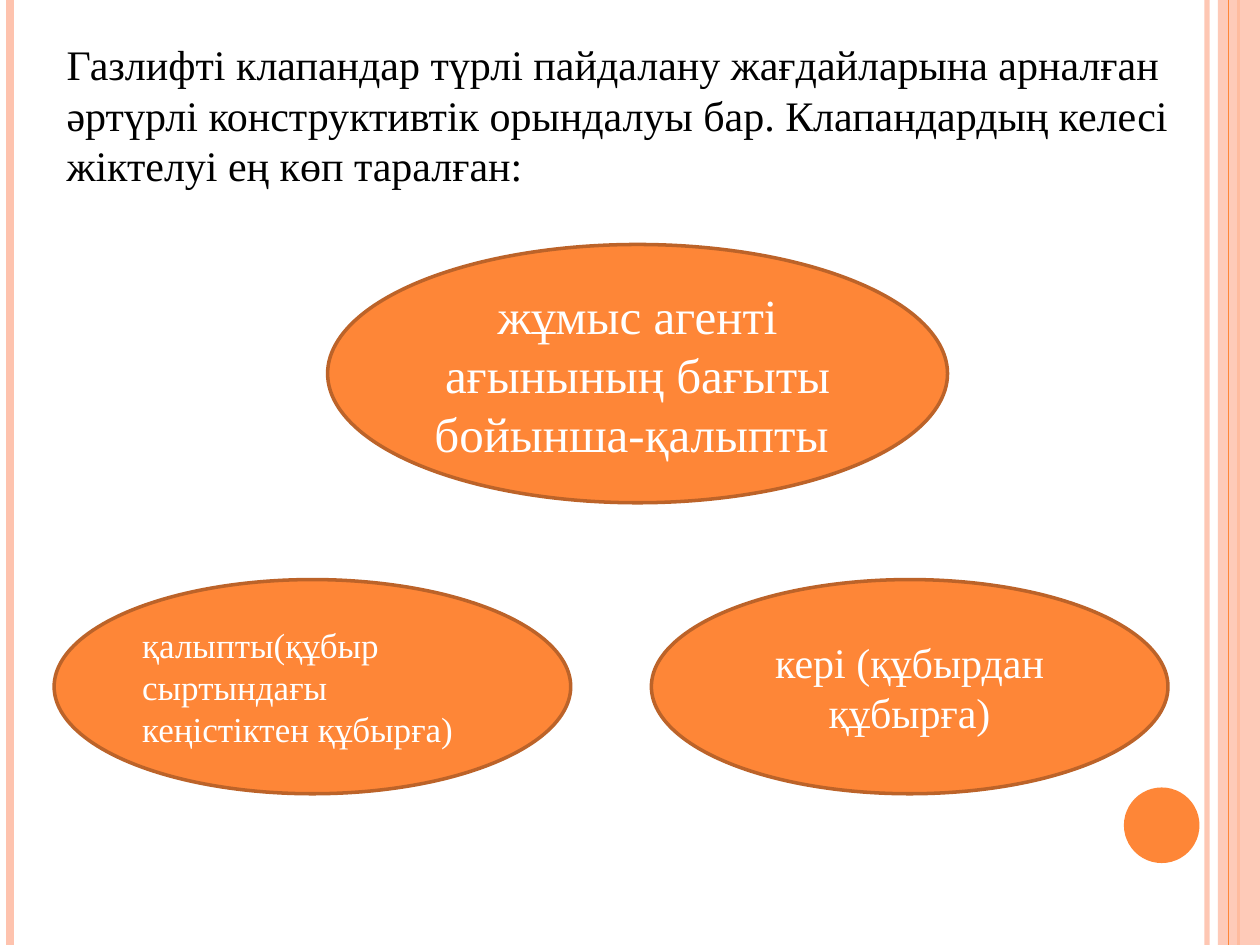
from dataclasses import dataclass

from lxml.etree import SubElement
from pptx import Presentation
from pptx.dml.color import RGBColor
from pptx.enum.shapes import MSO_CONNECTOR as Link, MSO_SHAPE as Kind
from pptx.enum.text import MSO_ANCHOR as Anchor, PP_ALIGN as Align
from pptx.oxml.ns import qn
from pptx.util import Inches, Pt

WIDE, HIGH = 10, 7.5
FONT = "Times New Roman"
ORANGE = RGBColor(0xFE, 0x86, 0x37)
BROWN = RGBColor(0xBC, 0x63, 0x29)
PEACH = RGBColor(0xFE, 0xC3, 0xAE)
WHITE = RGBColor(0xFF, 0xFF, 0xFF)
BLACK = RGBColor(0, 0, 0)


@dataclass
class Box:
    left: float
    top: float
    width: float
    height: float

    def emu(self) -> list:
        return [Inches(n) for n in (self.left, self.top, self.width, self.height)]


@dataclass
class Rule:
    x: float
    color: RGBColor
    weight: float
    alpha: int = 100


@dataclass
class Oval:
    box: Box
    text: str
    size: int
    align: Align = Align.CENTER


def fade(props, alpha: int) -> None:
    """Set the opacity, in percent, of the first solid colour in props."""
    color = next(props.iter(qn("a:srgbClr")))
    SubElement(color, qn("a:alpha")).set("val", str(alpha * 1000))


def add_rule(slide, rule: Rule) -> None:
    x = Inches(rule.x)
    line = slide.shapes.add_connector(Link.STRAIGHT, x, 0, x, Inches(HIGH))
    line.line.color.rgb = rule.color
    line.line.width = Pt(rule.weight)
    props = line._element.spPr
    if rule.alpha < 100:
        fade(props, rule.alpha)
    SubElement(props, qn("a:effectLst"))


def add_form(slide, kind: Kind, box: Box, color: RGBColor):
    form = slide.shapes.add_shape(kind, *box.emu())
    form.shadow.inherit = False
    form.fill.solid()
    form.fill.fore_color.rgb = color
    form.line.fill.background()
    return form


def write(frame, text: str, size: int, color: RGBColor, align: Align) -> None:
    frame.word_wrap = True
    par = frame.paragraphs[0]
    par.text = text
    par.alignment = align
    par.font.name = FONT
    par.font.size = Pt(size)
    par.font.color.rgb = color


def add_oval(slide, oval: Oval) -> None:
    form = add_form(slide, Kind.OVAL, oval.box, ORANGE)
    form.line.color.rgb = BROWN
    form.line.width = Pt(2)
    form.text_frame.vertical_anchor = Anchor.MIDDLE
    write(form.text_frame, oval.text, oval.size, WHITE, oval.align)


BACK = [Rule(9.58, PEACH, 3, 93), Rule(0.08, PEACH, 4.5), Rule(9.83, ORANGE, 1.5)]
FRONT = Rule(9.75, ORANGE, 0.75)
BAND = Box(WIDE * 29 / 30, 0, WIDE / 30, HIGH)
DOT = Box(8.92, 6.25, 0.6, 0.6)
INTRO = ("Газлифті клапандар түрлі пайдалану жағдайларына арналған әртүрлі "
         "конструктивтік орындалуы бар. Клапандардың келесі жіктелуі ең көп "
         "таралған:")
ROW, LOW = 4.6, 1.7
OVALS = [
    Oval(Box(2.6, 1.94, 4.92, 2.05),
         "жұмыс агенті ағынының бағыты бойынша-қалыпты ", 28),
    Oval(Box(0.43, ROW, 4.1, LOW),
         "қалыпты(құбыр сыртындағы кеңістіктен құбырға) ", 20, Align.JUSTIFY),
    Oval(Box(5.17, ROW, 4.1, LOW), "кері (құбырдан құбырға)", 24),
]


def main() -> None:
    deck = Presentation()
    deck.slide_width, deck.slide_height = Inches(WIDE), Inches(HIGH)
    slide = deck.slides.add_slide(deck.slide_layouts[6])

    # Side stripes and dot
    for rule in BACK:
        add_rule(slide, rule)
    band = add_form(slide, Kind.RECTANGLE, BAND, PEACH)
    fade(band._element.spPr, 87)
    add_rule(slide, FRONT)
    add_form(slide, Kind.OVAL, DOT, ORANGE)

    # Opening text
    intro = slide.shapes.add_textbox(*Box(0.43, 0.26, 9.29, 1.31).emu())
    write(intro.text_frame, INTRO, 24, BLACK, Align.LEFT)

    # Valve types
    for oval in OVALS:
        add_oval(slide, oval)

    deck.save("out.pptx")


if __name__ == "__main__":
    main()
